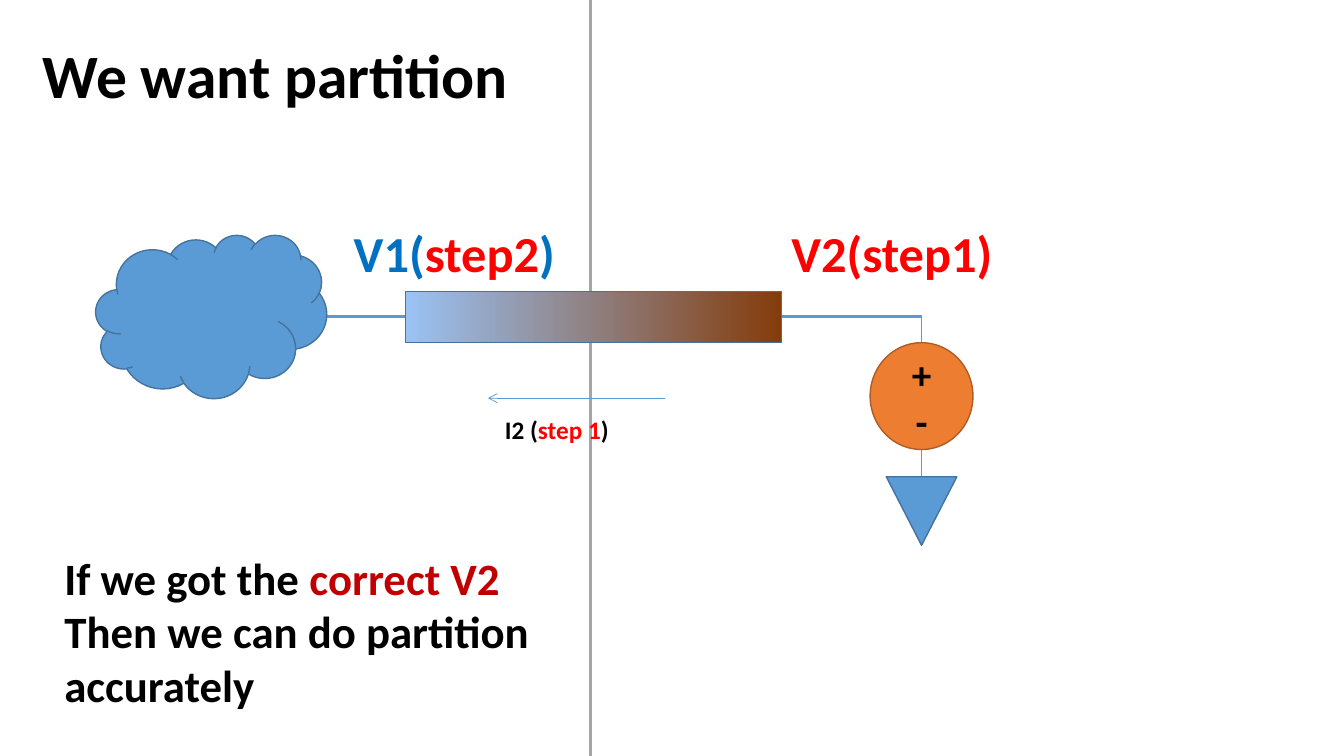
import dataclasses

import pptx
import pptx.dml.color
import pptx.enum.shapes
import pptx.enum.text
import pptx.oxml
import pptx.oxml.ns
import pptx.util

Inches = pptx.util.Inches
Shapes = pptx.enum.shapes.MSO_SHAPE
Align = pptx.enum.text.PP_ALIGN


@dataclasses.dataclass(frozen=True)
class Theme:
    font: str = "Calibri"
    black: str = "000000"
    red: str = "FF0000"
    dark_red: str = "C00000"
    label_blue: str = "0070C0"
    blue: str = "5B9BD5"
    blue_edge: str = "43739E"
    orange: str = "ED7D31"
    orange_edge: str = "AF5C24"
    gray: str = "A5A5A5"
    gradient: tuple = ("9AC3F5", "843C0B")
    title: int = 44
    label: int = 36
    body: int = 32
    sign: int = 28
    small: int = 18
    thin: float = 0.5
    edge: float = 1
    thick: float = 2.25


THEME = Theme()


def color(value):
    return pptx.dml.color.RGBColor.from_string(value)


def place(box, left, top, width, height):
    return [Inches(value) for value in (box[0] + left, box[1] + top, width, height)]


def write(shape, paragraphs, size, align=Align.LEFT):
    frame = shape.text_frame
    frame_format = {
        "word_wrap": False,
        "auto_size": pptx.enum.text.MSO_AUTO_SIZE.SHAPE_TO_FIT_TEXT,
        "vertical_anchor": pptx.enum.text.MSO_ANCHOR.TOP,
    }
    for name, value in frame_format.items():
        setattr(frame, name, value)
    for index, spans in enumerate(paragraphs):
        para = frame.add_paragraph() if index else frame.paragraphs[0]
        para.alignment = align
        for text, tint in spans:
            span = para.add_run()
            span.text = text
            font_format = {"name": THEME.font, "size": pptx.util.Pt(size), "bold": True}
            for name, value in font_format.items():
                setattr(span.font, name, value)
            span.font.color.rgb = color(tint)


def add_text(page, area, paragraphs, size, align=Align.LEFT):
    write(page.shapes.add_textbox(*area), paragraphs, size, align)


def add_line(page, box, start, end, tint, width, arrow=False):
    points = [Inches(box[axis] + point[axis]) for point in (start, end) for axis in (0, 1)]
    line = page.shapes.add_connector(pptx.enum.shapes.MSO_CONNECTOR.STRAIGHT, *points)
    line.line.color.rgb = color(tint)
    line.line.width = pptx.util.Pt(width)
    if arrow:
        outline = line.line._get_or_add_ln()
        tail = pptx.oxml.parse_xml(f'<a:tailEnd {pptx.oxml.ns.nsdecls("a")} type="arrow"/>')
        outline.append(tail)
    effects = pptx.oxml.parse_xml(f'<a:effectLst {pptx.oxml.ns.nsdecls("a")}/>')
    line._element.spPr.append(effects)


def add_part(page, area, kind, fill, edge, rotation=0):
    part = page.shapes.add_shape(kind, *area)
    part.shadow.inherit = False
    part.rotation = rotation
    part.line.color.rgb = color(edge)
    part.line.width = pptx.util.Pt(THEME.edge)
    if isinstance(fill, tuple):
        part.fill.gradient()
        part.fill.gradient_angle = rotation
        for stop, tint, position in zip(part.fill.gradient_stops, fill, (0, 1)):
            stop.color.rgb = color(tint)
            stop.position = position
    else:
        part.fill.solid()
        part.fill.fore_color.rgb = color(fill)


def add_title(page, box):
    title = page.shapes.title
    for name, value in zip(("left", "top", "width", "height"), place(box, 0, 0, *box[2:])):
        setattr(title, name, value)
    write(title, [[("We want partition", THEME.black)]], THEME.title)


def add_source(page, box):
    middle = box[2] / 2
    add_line(page, box, (middle, 0), (middle, 1.59), THEME.blue, THEME.thin)
    add_part(page, place(box, 0, 0.26, box[2], 1.06), Shapes.OVAL, THEME.orange, THEME.orange_edge)
    signs = [[(sign, THEME.black)] for sign in "+-"]
    add_text(page, place(box, middle - 0.2, 0.29, 0.4, 1.04), signs, THEME.sign, Align.CENTER)
    add_part(page, place(box, middle - 0.35, 1.59, 0.7, 0.68), Shapes.ISOSCELES_TRIANGLE,
             THEME.blue, THEME.blue_edge, 180)


def add_circuit(page, box):
    wire = 0.99
    add_line(page, box, (1.51, wire), (8.19, wire), THEME.blue, THEME.thick)
    add_part(page, place(box, 3.07, 0.74, 3.73, 0.51), Shapes.RECTANGLE,
             THEME.gradient, THEME.blue_edge, 180)
    add_part(page, place(box, 0, 0.18, 2.29, 1.62), Shapes.CLOUD, THEME.blue, THEME.blue_edge)
    first = [("V1(", THEME.label_blue), ("step2", THEME.red), (")", THEME.label_blue)]
    second = [("V2(step1)", THEME.red)]
    for left, spans in ((2.46, first), (6.8, second)):
        add_text(page, place(box, left, 0, 2.22, 0.71), [spans], THEME.label)
    add_line(page, box, (5.65, 1.8), (3.89, 1.8), THEME.blue, THEME.thin, True)
    current = [("I2 (", THEME.black), ("step 1", THEME.red), (")", THEME.black)]
    add_text(page, place(box, 3.96, 1.91, 1.24, 0.4), [current], THEME.small)
    add_source(page, (box[0] + 7.68, box[1] + wire, 1.02, 2.27))


def add_conclusion(page, box):
    paragraphs = [
        [("If we got the ", THEME.black), ("correct V2", THEME.dark_red)],
        [("Then we can do partition", THEME.black)],
        [("accurately", THEME.black)],
    ]
    add_text(page, place(box, 0, 0, *box[2:]), paragraphs, THEME.body)


def main():
    deck = pptx.Presentation()
    deck.slide_width, deck.slide_height = Inches(13.33), Inches(7.5)
    page = deck.slides.add_slide(deck.slide_layouts.get_by_name("Title Only"))
    add_line(page, (5.86, 0), (0, 0), (0, 7.5), THEME.gray, THEME.thick)
    add_title(page, (0.32, 0.32, 5.01, 0.84))
    add_circuit(page, (0.95, 2.15, 9.02, 3.26))
    add_conclusion(page, (0.54, 5.41, 4.86, 1.72))
    deck.save("out.pptx")


if __name__ == "__main__":
    main()
